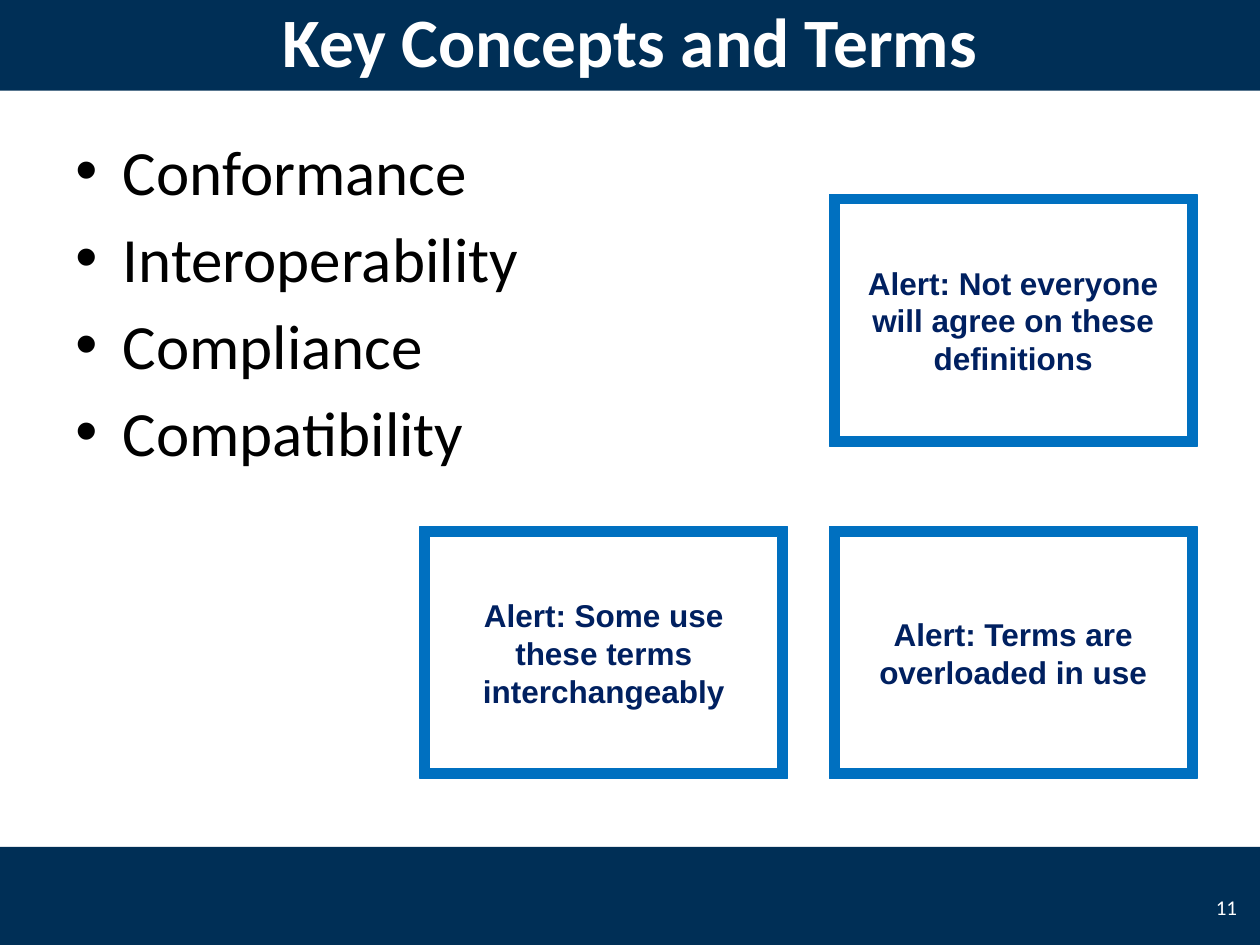
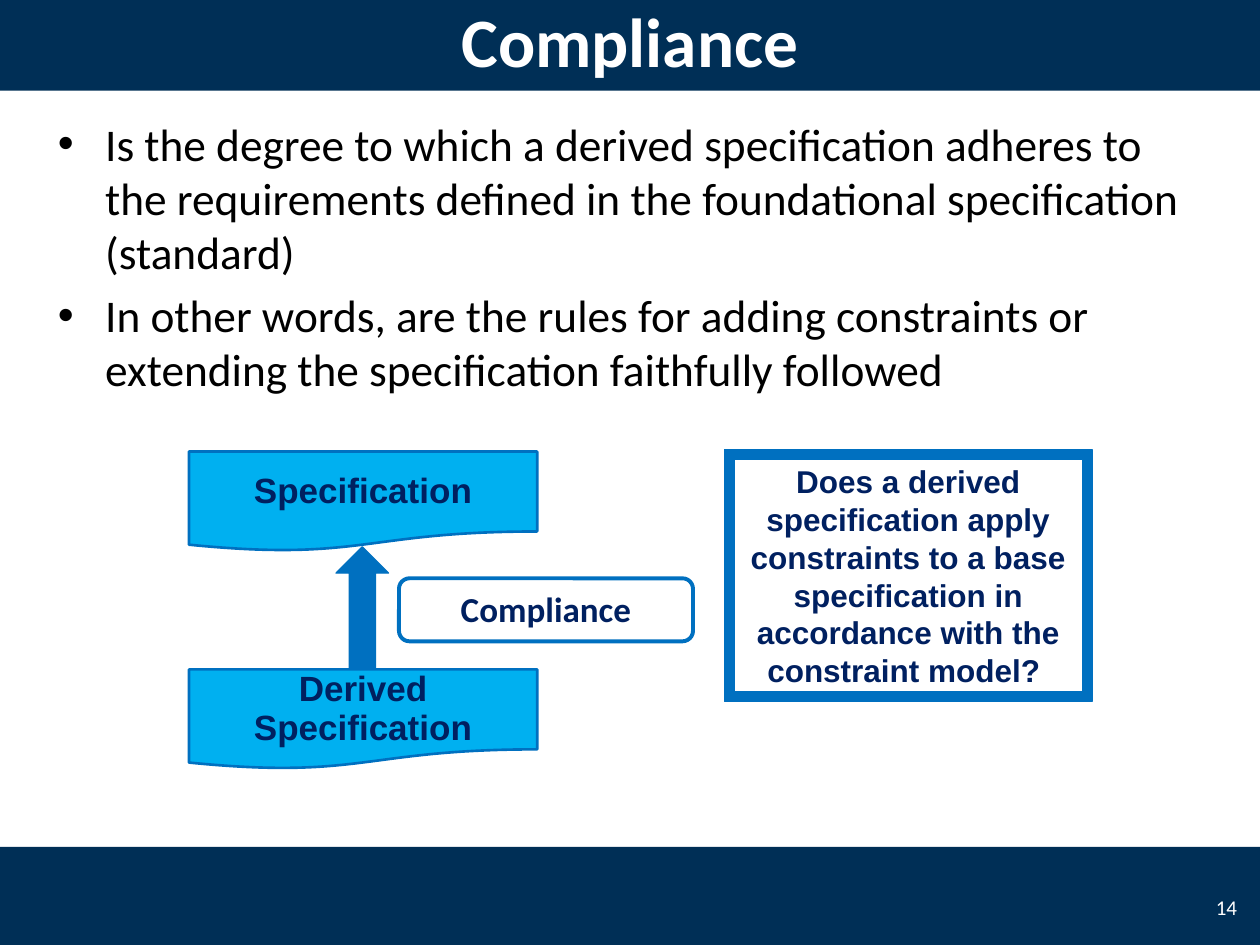
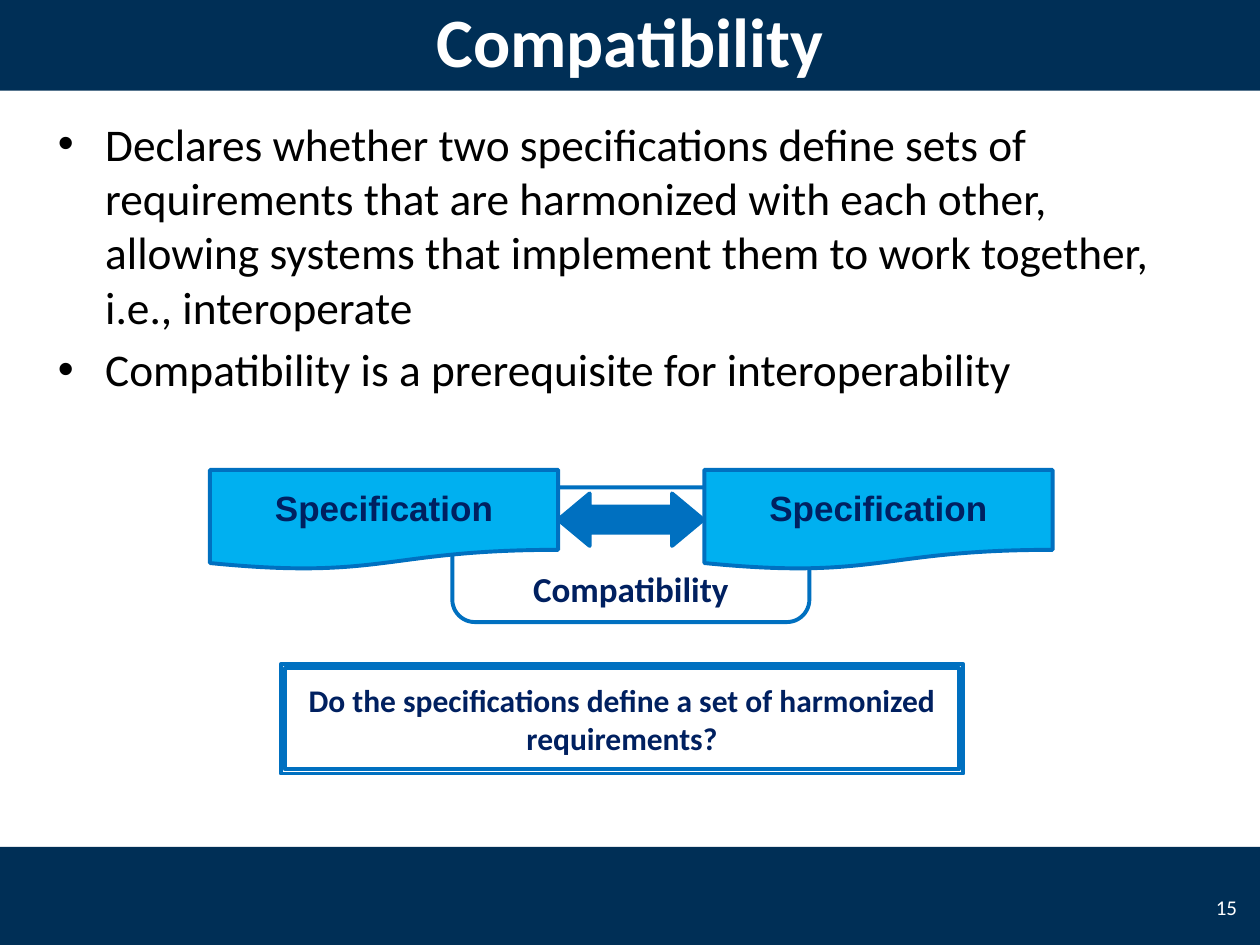
from dataclasses import dataclass
from typing import Optional

from lxml import etree
from pptx import Presentation
from pptx.dml.color import RGBColor
from pptx.enum.shapes import MSO_SHAPE
from pptx.enum.text import MSO_ANCHOR, MSO_AUTO_SIZE, PP_ALIGN
from pptx.oxml.ns import qn
from pptx.util import Pt

RECT = MSO_SHAPE.RECTANGLE
ROUND = MSO_SHAPE.ROUNDED_RECTANGLE
FRAME = MSO_SHAPE.FRAME
DOC = MSO_SHAPE.FLOWCHART_DOCUMENT
DOWN = MSO_SHAPE.DOWN_ARROW
BOTH = MSO_SHAPE.LEFT_RIGHT_ARROW
TOP, MID, LOW = MSO_ANCHOR.TOP, MSO_ANCHOR.MIDDLE, MSO_ANCHOR.BOTTOM
LEFT, MIDDLE, RIGHT = PP_ALIGN.LEFT, PP_ALIGN.CENTER, PP_ALIGN.RIGHT
NO_FIT = MSO_AUTO_SIZE.NONE


@dataclass(frozen=True)
class Theme:
    band: str = "002F56"
    blue: str = "0070C0"
    sky: str = "00B0F0"
    ink: str = "002060"
    black: str = "000000"
    white: str = "FFFFFF"
    head: str = "Calibri"
    sans: str = "Arial"
    title: float = 39.6
    large: float = 36
    body: float = 25.9
    label: float = 20
    note: float = 18
    page: float = 12


T = Theme()


@dataclass(frozen=True)
class Box:
    x: float
    y: float
    w: float
    h: float

    def points(self) -> tuple:
        return Pt(self.x), Pt(self.y), Pt(self.w), Pt(self.h)


@dataclass(frozen=True)
class Item:
    """A preset shape with an optional centred label."""
    kind: int
    box: Box
    fill: str
    line: Optional[str] = T.blue
    width: float = 0.75
    text: str = ""
    font: str = T.sans
    size: float = T.label
    anchor: int = MID
    lead: float = 1.0
    turn: float = 0
    adjust: tuple = ()


@dataclass(frozen=True)
class Page:
    number: int
    title: str
    body: Box
    size: float
    points: tuple
    items: tuple


# Shared geometry
WIDE, HIGH = 720, 540
HEAD = Box(0, -5.8, WIDE, 57.6)
FOOT = Box(0, 484, WIDE, 57.6)
NUMBER = Box(684, 504, 30, 29)
BODY = Box(26, 62.6, 658, 158)
INDENT = 27
RIM = (0.038,)


# Item makers
def alert(x: float, y: float, text: str) -> Item:
    return Item(FRAME, Box(x, y, 210, 144), T.blue, text=text,
                size=T.note, adjust=RIM)


def paper(x: float, y: float, text: str, width: float) -> Item:
    return Item(DOC, Box(x, y, 199, 57), T.sky, width=width, text=text,
                lead=0.93)


def label(box: Box, text: str, anchor: int) -> Item:
    return Item(ROUND, box, T.white, width=2.25, text=text, font=T.head,
                anchor=anchor)


# Drawing
def write(frame, *lines: str, font: str = T.head, size: float = T.label,
          color: str = T.white, bold: bool = False, align: int = LEFT,
          anchor: int = TOP, lead: float = 1.0, bullet: bool = False) -> None:
    frame.word_wrap = True
    frame.auto_size = NO_FIT
    frame.vertical_anchor = anchor
    for i, line in enumerate(lines):
        para = frame.add_paragraph() if i else frame.paragraphs[0]
        if bullet:
            props = para._p.get_or_add_pPr()
            props.set("marL", str(Pt(INDENT)))
            props.set("indent", str(-Pt(INDENT)))
            etree.SubElement(props, qn("a:buFont")).set("typeface", T.sans)
            etree.SubElement(props, qn("a:buChar")).set("char", "•")
        if i:
            para.space_before = Pt(round(size * 0.18, 1))
        para.alignment = align
        if lead != 1:
            para.line_spacing = lead
        run = para.add_run()
        run.text = line
        run.font.name = font
        run.font.size = Pt(size)
        run.font.bold = bold
        run.font.color.rgb = RGBColor.from_string(color)


def draw(slide, item: Item):
    shape = slide.shapes.add_shape(item.kind, *item.box.points())
    shape.shadow.inherit = False
    shape.rotation = item.turn
    for i, value in enumerate(item.adjust):
        shape.adjustments[i] = value
    shape.fill.solid()
    shape.fill.fore_color.rgb = RGBColor.from_string(item.fill)
    if item.line:
        shape.line.color.rgb = RGBColor.from_string(item.line)
        shape.line.width = Pt(item.width)
    else:
        shape.line.fill.background()
    if item.text:
        write(shape.text_frame, item.text, font=item.font, size=item.size,
              color=T.ink, bold=True, align=MIDDLE, anchor=item.anchor,
              lead=item.lead)
    return shape


def share(slide, layout) -> None:
    """Move the bands to the layout, in place of its footer fields."""
    for holder in list(layout.placeholders)[1:]:
        layout.shapes.element.remove(holder.element)
    for box in (HEAD, FOOT):
        band = draw(slide, Item(RECT, box, T.band, line=None))
        layout.shapes.element.insert(2, band.element)


def build(slide, page: Page) -> None:
    title = slide.shapes.title
    title.left, title.top, title.width, title.height = HEAD.points()
    write(title.text_frame, page.title, size=T.title, bold=True,
          align=MIDDLE, anchor=MID)
    number = slide.shapes.add_textbox(*NUMBER.points())
    write(number.text_frame, str(page.number), size=T.page, align=RIGHT,
          anchor=MID)
    body = slide.shapes.add_textbox(*page.body.points())
    write(body.text_frame, *page.points, size=page.size, color=T.black,
          bullet=True)
    for item in page.items:
        draw(slide, item)


# Content
PAGES = (
    Page(11, "Key Concepts and Terms", Box(36, 72, 336, 222), T.large,
         ("Conformance", "Interoperability", "Compliance", "Compatibility"),
         (alert(474, 111, "Alert: Not everyone will agree on these "
                          "definitions"),
          alert(474, 301, "Alert: Terms are overloaded in use"),
          alert(240, 301, "Alert: Some use these terms interchangeably"))),
    Page(14, "Compliance", BODY, T.body,
         ("Is the degree to which a derived specification adheres to the "
          "requirements defined in the foundational specification (standard)",
          "In other words, are the rules for adding constraints or extending "
          "the specification faithfully followed"),
         (label(Box(228, 330.5, 168, 36), "Compliance", TOP),
          paper(108, 258, "Specification", 1.5),
          Item(DOWN, Box(192, 312.5, 30, 70.5), T.blue, turn=180),
          alert(414, 257, "Does a derived specification apply constraints to "
                          "a base specification in accordance with the "
                          "constraint model? "),
          paper(108, 382.5, "Derived Specification", 1.5))),
    Page(15, "Compatibility", BODY, T.body,
         ("Declares whether two specifications define sets of requirements "
          "that are harmonized with each other, allowing systems that "
          "implement them to work together, i.e., interoperate",
          "Compatibility is a prerequisite for interoperability"),
         (label(Box(258.5, 278.5, 204, 77), "Compatibility", LOW),
          Item(FRAME, Box(160.5, 379.5, 390, 62.5), T.white, width=2.25,
               text="Do the specifications define a set of harmonized "
                    "requirements?",
               font=T.head, size=T.note, adjust=RIM),
          Item(BOTH, Box(319, 282, 83, 30), T.blue, width=2.25,
               adjust=(0.5, 0.6)),
          paper(120, 268.5, "Specification", 2.25),
          paper(402.5, 268.5, "Specification", 2.25))),
)


def main() -> None:
    deck = Presentation()
    deck.slide_width, deck.slide_height = Pt(WIDE), Pt(HIGH)
    layout = deck.slide_layouts[5]
    for i, page in enumerate(PAGES):
        slide = deck.slides.add_slide(layout)
        if i == 0:
            share(slide, layout)
        build(slide, page)
    deck.save("out.pptx")


if __name__ == "__main__":
    main()
